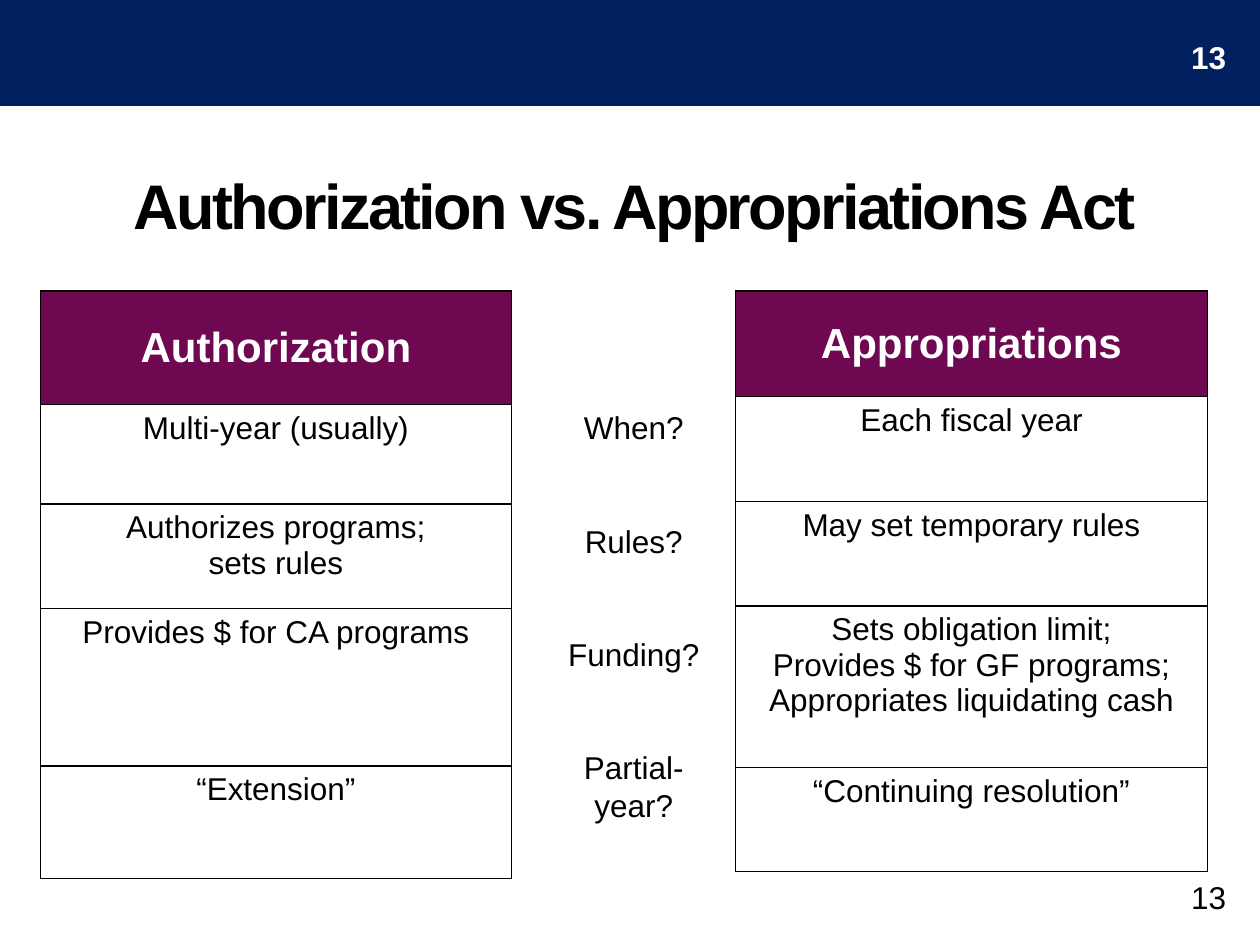
from dataclasses import dataclass

from lxml import etree
from pptx import Presentation
from pptx.dml.color import RGBColor
from pptx.enum.shapes import MSO_SHAPE
from pptx.enum.text import MSO_ANCHOR, MSO_AUTO_SIZE, PP_ALIGN
from pptx.oxml.ns import qn
from pptx.util import Inches, Pt

CENTER, RIGHT = PP_ALIGN.CENTER, PP_ALIGN.RIGHT
TOP, MIDDLE = MSO_ANCHOR.TOP, MSO_ANCHOR.MIDDLE
TITLE_ONLY = 5


@dataclass(frozen=True)
class Theme:
    font: str = "Arial"
    navy: str = "002060"
    plum: str = "6D0851"
    black: str = "000000"
    white: str = "FFFFFF"
    title_size: int = 36
    heading_size: int = 24
    body_size: int = 18
    border_width: float = 0.75


THEME = Theme()
SLIDE_WIDTH, SLIDE_HEIGHT = 10, 7.5
TABLE_TOP, TABLE_WIDTH = 2.31, 3.74
LABEL_LEFT, LABEL_TOP, LABEL_STEP = 4.39, 3.19, 0.9
LABEL_WIDTH, LABEL_HEIGHT = 1.28, 0.4
PAGE_NUMBER = "13"

# Left edge, row heights and rows of each table; the first row is the heading.
AUTHORIZATION = (0.32, (0.9, 0.79, 0.83, 1.25, 0.89), (
    "Authorization",
    "Multi-year (usually)",
    "Authorizes programs;\vsets rules",
    "Provides $ for CA programs",
    "“Extension”",
))
APPROPRIATIONS = (5.84, (0.84, 0.83, 0.83, 1.28, 0.83), (
    "Appropriations",
    "Each fiscal year",
    "May set temporary rules",
    "Sets obligation limit;\vProvides $ for GF programs; Appropriates liquidating cash",
    "“Continuing resolution”",
))
QUESTIONS = ("When?", "Rules?", "Funding?", "Partial-year?")


def box(left, top, width, height):
    return [Inches(length) for length in (left, top, width, height)]


def write(frame, text, size=THEME.body_size, color=THEME.black, bold=False, align=CENTER):
    frame.text = text
    paragraph = frame.paragraphs[0]
    paragraph.alignment = align
    font = paragraph.font
    font.name, font.size, font.bold = THEME.font, Pt(size), bold
    font.color.rgb = RGBColor.from_string(color)


def add_band(slide):
    band = slide.shapes.add_shape(MSO_SHAPE.RECTANGLE, *box(0, 0, SLIDE_WIDTH, 0.83))
    band.shadow.inherit = False
    band.fill.solid()
    band.fill.fore_color.rgb = band.line.color.rgb = RGBColor.from_string(THEME.navy)
    band.line.width = Pt(2)


def set_title(slide, text):
    title = slide.shapes.title
    title.left, title.top, title.width, title.height = box(0.25, 1.25, 9.58, 0.75)
    frame = title.text_frame
    frame.auto_size = MSO_AUTO_SIZE.NONE
    frame.vertical_anchor = MIDDLE
    write(frame, text, THEME.title_size, bold=True)
    # Tighten the letter spacing by 1.5 points.
    frame.paragraphs[0].runs[0].font._element.set("spc", "-150")


def add_label(slide, text, place, **style):
    frame = slide.shapes.add_textbox(*box(*place)).text_frame
    frame.word_wrap = True
    write(frame, text, **style)


def outline(cell):
    """Draw all four borders; they must come before the fill in the cell's XML."""
    properties = cell._tc.get_or_add_tcPr()
    for position, side in enumerate(("a:lnL", "a:lnR", "a:lnT", "a:lnB")):
        border = etree.Element(qn(side), w=str(Pt(THEME.border_width)))
        fill = etree.SubElement(border, qn("a:solidFill"))
        etree.SubElement(fill, qn("a:srgbClr"), val=THEME.black)
        properties.insert(position, border)


def add_table(slide, left, heights, rows):
    place = box(left, TABLE_TOP, TABLE_WIDTH, sum(heights))
    table = slide.shapes.add_table(len(rows), 1, *place).table
    table.horz_banding = False
    for index, (height, text) in enumerate(zip(heights, rows)):
        table.rows[index].height = Inches(height)
        cell = table.cell(index, 0)
        is_heading = index == 0
        if is_heading:
            cell.fill.solid()
            cell.fill.fore_color.rgb = RGBColor.from_string(THEME.plum)
            write(cell.text_frame, text, THEME.heading_size, THEME.white, bold=True)
        else:
            cell.fill.background()
            write(cell.text_frame, text)
        cell.vertical_anchor = MIDDLE if is_heading else TOP
        outline(cell)


def main():
    deck = Presentation()
    deck.slide_width, deck.slide_height = Inches(SLIDE_WIDTH), Inches(SLIDE_HEIGHT)
    slide = deck.slides.add_slide(deck.slide_layouts[TITLE_ONLY])

    add_band(slide)
    set_title(slide, "Authorization vs. Appropriations Act")
    for column in (AUTHORIZATION, APPROPRIATIONS):
        add_table(slide, *column)
    for row, question in enumerate(QUESTIONS):
        top = LABEL_TOP + row * LABEL_STEP
        add_label(slide, question, (LABEL_LEFT, top, LABEL_WIDTH, LABEL_HEIGHT))
    for top, color, bold in ((6.92, THEME.black, False), (0.25, THEME.white, True)):
        add_label(slide, PAGE_NUMBER, (7.5, top, 2.33, LABEL_HEIGHT),
                  color=color, bold=bold, align=RIGHT)

    deck.save("out.pptx")


if __name__ == "__main__":
    main()
